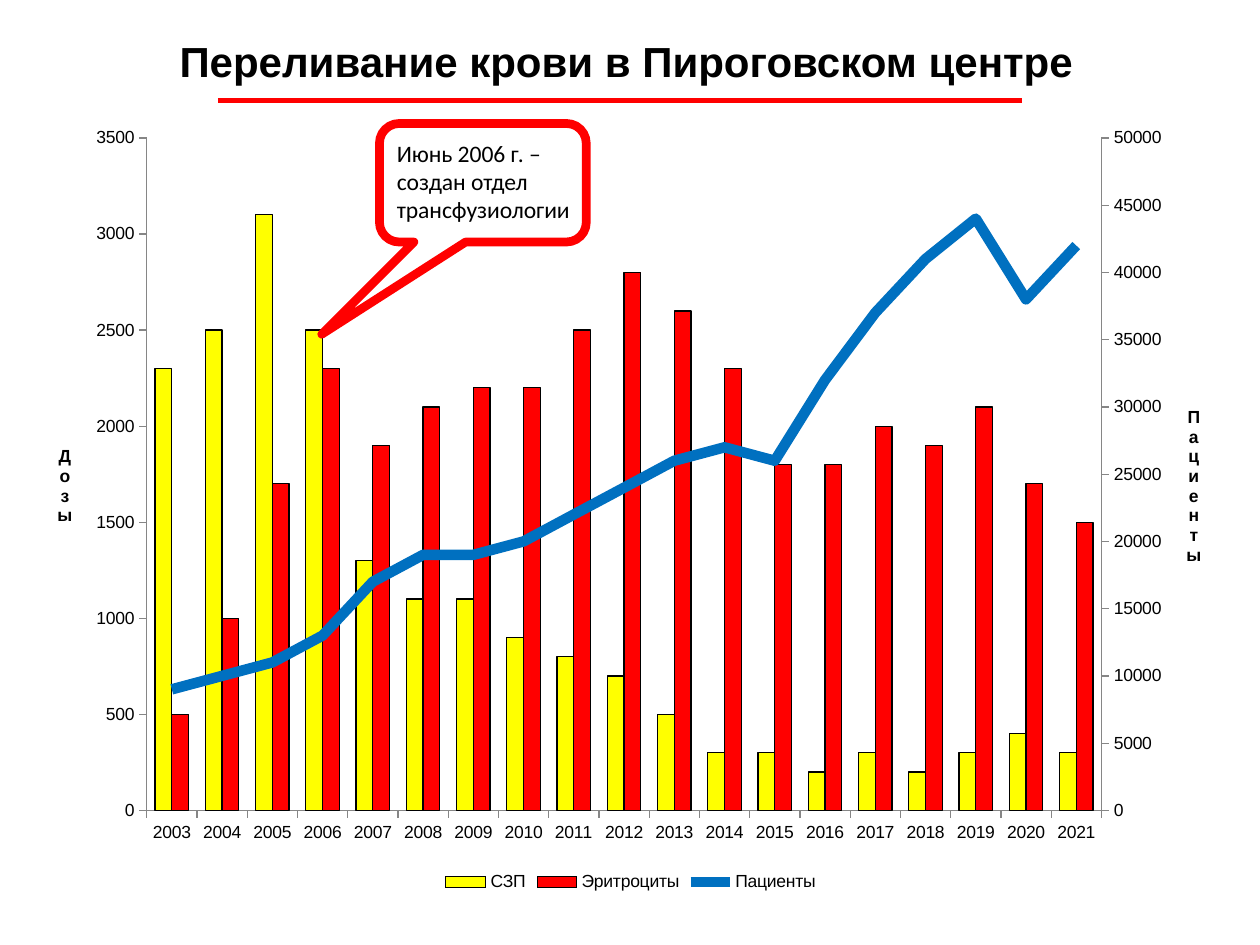
from copy import deepcopy

from lxml import etree
from pptx import Presentation
from pptx.chart.data import CategoryChartData
from pptx.dml.color import RGBColor
from pptx.enum.chart import XL_CHART_TYPE, XL_LEGEND_POSITION, XL_TICK_MARK
from pptx.enum.shapes import MSO_CONNECTOR, MSO_SHAPE
from pptx.enum.text import MSO_ANCHOR, MSO_AUTO_SIZE, PP_ALIGN
from pptx.oxml import parse_xml
from pptx.oxml.ns import nsdecls, qn
from pptx.util import Cm, Pt

COLUMNS = XL_CHART_TYPE.COLUMN_CLUSTERED
BOTTOM = XL_LEGEND_POSITION.BOTTOM
OUTSIDE, NO_TICK = XL_TICK_MARK.OUTSIDE, XL_TICK_MARK.NONE
STRAIGHT = MSO_CONNECTOR.STRAIGHT
CALLOUT = MSO_SHAPE.ROUNDED_RECTANGULAR_CALLOUT
MIDDLE, CENTER, LEFT = MSO_ANCHOR.MIDDLE, PP_ALIGN.CENTER, PP_ALIGN.LEFT
GROW = MSO_AUTO_SIZE.SHAPE_TO_FIT_TEXT

BLACK, RED, YELLOW, BLUE, GREY = "000000", "FF0000", "FFFF00", "0070C0", "868686"

YEARS = [str(year) for year in range(2003, 2022)]
PLASMA = [2300, 2500, 3100, 2500, 1300, 1100, 1100, 900, 800, 700,
          500, 300, 300, 200, 300, 200, 300, 400, 300]
RED_CELLS = [500, 1000, 1700, 2300, 1900, 2100, 2200, 2200, 2500, 2800,
             2600, 2300, 1800, 1800, 2000, 1900, 2100, 1700, 1500]
PATIENTS = [9000, 10000, 11000, 13000, 17000, 19000, 19000, 20000, 22000, 24000,
            26000, 27000, 26000, 32000, 37000, 41000, 44000, 38000, 42000]


def rgb(color):
    return RGBColor.from_string(color)


def write(tf, text, size=12, font="Arial", color=BLACK, bold=False, align=LEFT):
    """Fill a text frame, one paragraph for each line of text."""
    for i, line in enumerate(text.split("\n")):
        p = tf.paragraphs[0] if i == 0 else tf.add_paragraph()
        p.alignment = align
        r = p.add_run()
        r.text = line
        r.font.size, r.font.name, r.font.bold = Pt(size), font, bold
        r.font.color.rgb = rgb(color)


def set_line(line, color, width):
    line.color.rgb = rgb(color)
    line.width = Pt(width)


def set_layout(parent, after=None, inner=False, **fractions):
    """Fix a chart part at fractions of the chart's size."""
    layout = parent.find(qn("c:layout"))
    if layout is None:
        layout = etree.Element(qn("c:layout"))
        parent.insert(0 if after is None else parent.index(after) + 1, layout)
    for child in list(layout):
        layout.remove(child)
    manual = etree.SubElement(layout, qn("c:manualLayout"))
    if inner:
        etree.SubElement(manual, qn("c:layoutTarget"), val="inner")
    for key in ("x", "y"):
        etree.SubElement(manual, qn(f"c:{key}Mode"), val="edge")
    for key, value in fractions.items():
        etree.SubElement(manual, qn(f"c:{key}"), val=str(value))


def set_axis(axis, maximum=None, step=None):
    axis.major_tick_mark, axis.minor_tick_mark = OUTSIDE, NO_TICK
    set_line(axis.format.line, GREY, 0.75)
    if maximum:
        axis.has_major_gridlines = False
        axis.minimum_scale, axis.maximum_scale = 0, maximum
        axis.major_unit = step


def add_axis_title(axis, text, x, y):
    """Title with its letters stacked one below another."""
    tf = axis.axis_title.text_frame
    write(tf, text, size=10, bold=True, align=CENTER)
    body = tf._txBody.bodyPr
    body.set("rot", "0")
    body.set("vert", "wordArtVert")
    title = axis._element.find(qn("c:title"))
    set_layout(title, after=title.find(qn("c:tx")), x=x, y=y)


def move_to_line(chart, series):
    """Draw one column series as a line; return its new right value axis."""
    bars = chart._chartSpace.find(".//" + qn("c:barChart"))
    left = chart.value_axis
    cat, val = chart.category_axis._element, left._element
    ser = series._element
    line_chart = parse_xml(
        f'<c:lineChart {nsdecls("c")}><c:grouping val="standard"/>'
        '<c:varyColors val="0"/><c:marker val="1"/>'
        '<c:axId val="5001"/><c:axId val="5002"/></c:lineChart>')
    bars.addnext(line_chart)
    line_chart.insert(2, ser)
    for old in ser.findall(qn("c:invertIfNegative")):
        ser.remove(old)
    marker = parse_xml(f'<c:marker {nsdecls("c")}><c:symbol val="none"/></c:marker>')
    ser.find(qn("c:spPr")).addnext(marker)
    etree.SubElement(ser, qn("c:smooth"), val="0")

    # Second pair of axes: a hidden category axis and the right value axis
    cat2, val2 = deepcopy(cat), deepcopy(val)
    val.addnext(cat2)
    cat2.addnext(val2)
    for axis, own, other in ((cat2, "5001", "5002"), (val2, "5002", "5001")):
        axis.find(qn("c:axId")).set("val", own)
        axis.find(qn("c:crossAx")).set("val", other)
    cat2.find(qn("c:delete")).set("val", "1")
    val2.find(qn("c:axPos")).set("val", "r")
    val2.find(qn("c:crosses")).set("val", "max")
    return type(left)(val2)


def add_transfusion_chart(slide, left, top, width, height):
    data = CategoryChartData()
    data.categories = YEARS
    for name, values in (("СЗП", PLASMA), ("Эритроциты", RED_CELLS),
                         ("Пациенты", PATIENTS)):
        data.add_series(name, values)
    chart = slide.shapes.add_chart(COLUMNS, left, top, width, height, data).chart
    chart.has_title = False
    chart.font.size, chart.font.name = Pt(10), "Arial"
    chart.font.color.rgb = rgb(BLACK)
    chart.has_legend = True
    chart.legend.position = BOTTOM
    chart.legend.include_in_layout = False

    # Columns
    plot = chart.plots[0]
    plot.gap_width, plot.overlap, plot.vary_by_categories = 100, 0, False
    plasma, red_cells, patients = plot.series
    for s, color in ((plasma, YELLOW), (red_cells, RED)):
        s.format.fill.solid()
        s.format.fill.fore_color.rgb = rgb(color)
        set_line(s.format.line, BLACK, 0.75)
    set_line(patients.format.line, BLUE, 6)

    # Axes: chart.value_axis means another axis once there are two, so keep the first
    doses_axis = chart.value_axis
    set_axis(chart.category_axis)
    set_axis(doses_axis, 3500, 500)
    patients_axis = move_to_line(chart, patients)
    set_axis(patients_axis, 50000, 5000)
    add_axis_title(doses_axis, "Дозы", x=0.02, y=0.42)
    add_axis_title(patients_axis, "Пациенты", x=0.96, y=0.37)

    area = chart._chartSpace.find(".//" + qn("c:plotArea"))
    set_layout(area, inner=True, x=0.097, y=0.033, w=0.795, h=0.857)


def add_header(slide, left, top, width, height):
    title = slide.shapes.title
    title.left, title.top, title.width, title.height = left, top, width, height
    tf = title.text_frame
    tf.vertical_anchor, tf.word_wrap = MIDDLE, True
    write(tf, "Переливание крови в Пироговском центре", size=24, bold=True, align=CENTER)
    # Red rule under the title
    y = top + Cm(1.47)
    rule = slide.shapes.add_connector(STRAIGHT, left + Cm(1.06), y, left + Cm(17.27), y)
    set_line(rule.line, RED, 3)
    etree.SubElement(rule._element.spPr, qn("a:effectLst"))


def add_note(slide, left, top, width, height):
    # Text
    box = slide.shapes.add_textbox(left + Cm(0.1), top + Cm(0.18), Cm(4.04), Cm(1.98))
    tf = box.text_frame
    tf.word_wrap, tf.auto_size = False, GROW
    write(tf, "Июнь 2006 г. –\nсоздан отдел\nтрансфузиологии", size=13.5, font="Calibri")
    # Callout outline pointing at the 2006 columns
    sp = slide.shapes.add_shape(CALLOUT, left, top, width, height)
    sp.shadow.inherit = False
    sp.fill.background()
    set_line(sp.line, RED, 5)
    for i, value in enumerate((-0.779, 1.278, 0.167)):
        sp.adjustments[i] = value


def main():
    prs = Presentation()
    prs.slide_width, prs.slide_height = Cm(25.4), Cm(19.05)
    slide = prs.slides.add_slide(prs.slide_layouts[5])
    add_transfusion_chart(slide, Cm(0.61), Cm(2.26), Cm(24.21), Cm(15.82))
    add_header(slide, Cm(3.33), Cm(0.56), Cm(18.59), Cm(1.32))
    add_note(slide, Cm(7.65), Cm(2.49), Cm(4.17), Cm(2.39))
    prs.save("out.pptx")


if __name__ == "__main__":
    main()
